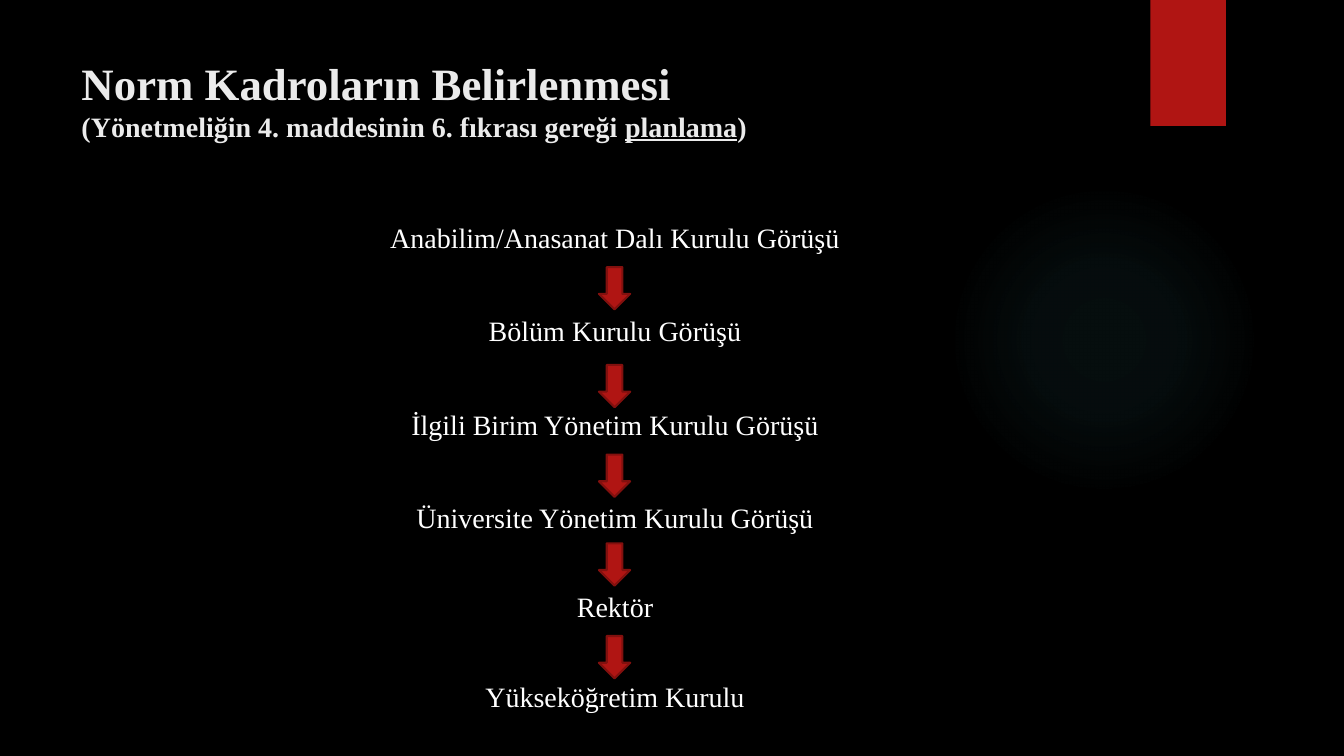
from lxml import etree
from pptx import Presentation, util as u
from pptx.dml.color import RGBColor
from pptx.enum import shapes, text
from pptx.oxml import ns

PX = 9144  # EMU in one px, 100 px to the inch
BLACK = RGBColor(0x00, 0x00, 0x00)
WHITE = RGBColor(0xFF, 0xFF, 0xFF)
PALE = RGBColor(0xEB, 0xEB, 0xEB)
RED = RGBColor(0xB0, 0x15, 0x13)
DARK = RGBColor(0x82, 0x10, 0x0E)
GLOW = RGBColor(0x50, 0xB9, 0xC1)
FONT = "Times New Roman"
SHAPE = shapes.MSO_SHAPE

# Label, its top and the top of the arrow below it
STEPS = [
    ("Anabilim/Anasanat Dalı Kurulu Görüşü", 0, 51),
    ("Bölüm Kurulu Görüşü", 92, 148),
    ("İlgili Birim Yönetim Kurulu Görüşü", 185, 237),
    ("Üniversite Yönetim Kurulu Görüşü", 278, 325),
    ("Rektör", 366, 417),
    ("Yükseköğretim Kurulu", 455, None),
]


def scale(*box):
    return [n * PX for n in box]


def add_form(slide, kind, box, fill=None):
    """Add a flat shape without outline."""
    form = slide.shapes.add_shape(kind, *scale(*box))
    form.shadow.inherit = False
    form.line.fill.background()
    if fill is not None:
        form.fill.solid()
        form.fill.fore_color.rgb = fill
    return form


def add_box(slide, box):
    frame = slide.shapes.add_textbox(*scale(*box)).text_frame
    frame.word_wrap = True
    frame.vertical_anchor = text.MSO_ANCHOR.TOP
    return frame


def style(run, size, color, bold=False):
    font = run.font
    font.name, font.size, font.bold = FONT, u.Pt(size), bold
    font.color.rgb = color


def add_glow(slide, box):
    """Add a disc that fades out from its centre."""
    disc = add_form(slide, SHAPE.OVAL, box)
    stops = "".join(
        f'<a:gs pos="{pos * 1000}"><a:srgbClr val="{GLOW}">'
        f'<a:alpha val="{alpha * 1000}"/></a:srgbClr></a:gs>'
        for pos, alpha in [(0, 7), (36, 6), (69, 0)])
    grad = etree.fromstring(
        f'<a:gradFill {ns.nsdecls("a")}><a:gsLst>{stops}</a:gsLst>'
        '<a:path path="circle"><a:fillToRect l="50000" t="50000" '
        'r="50000" b="50000"/></a:path></a:gradFill>')
    disc.element.spPr.find(ns.qn("a:prstGeom")).addnext(grad)


def add_title(slide, box):
    para = add_box(slide, box).paragraphs[0]
    parts = [("Norm Kadroların Belirlenmesi", 32),
             ("(Yönetmeliğin 4. maddesinin 6. fıkrası gereği ", 20),
             ("planlama", 20), (")", 20)]
    for i, (words, size) in enumerate(parts):
        if i == 1:
            para.add_line_break()
        run = para.add_run()
        run.text = words
        style(run, size, PALE, bold=True)
        run.font.underline = words == "planlama"


def add_flow(slide, box):
    """Add the centred labels with an arrow between each pair."""
    left, top, width, _ = box
    wide, high = 31, 42
    for label, y, tip in STEPS:
        frame = add_box(slide, (left, top + y, width, 51))
        frame.text = label
        para = frame.paragraphs[0]
        para.alignment = text.PP_ALIGN.CENTER
        style(para.runs[0], 20, WHITE)
        if tip is not None:
            spot = (left + (width - wide) // 2, top + tip, wide, high)
            arrow = add_form(slide, SHAPE.DOWN_ARROW, spot, RED)
            arrow.line.color.rgb = DARK
            arrow.line.width = u.Pt(1.5)


def main():
    deck = Presentation()
    deck.slide_width, deck.slide_height = scale(1333, 750)
    slide = deck.slides.add_slide(deck.slide_layouts[6])
    back = slide.background.fill
    back.solid()
    back.fore_color.rgb = BLACK
    add_glow(slide, (941, 183, 308, 308))
    add_form(slide, SHAPE.RECTANGLE, (1141, 0, 75, 125), RED)
    add_title(slide, (71, 50, 1029, 164))
    add_flow(slide, (121, 214, 978, 506))
    deck.save("out.pptx")


if __name__ == "__main__":
    main()
